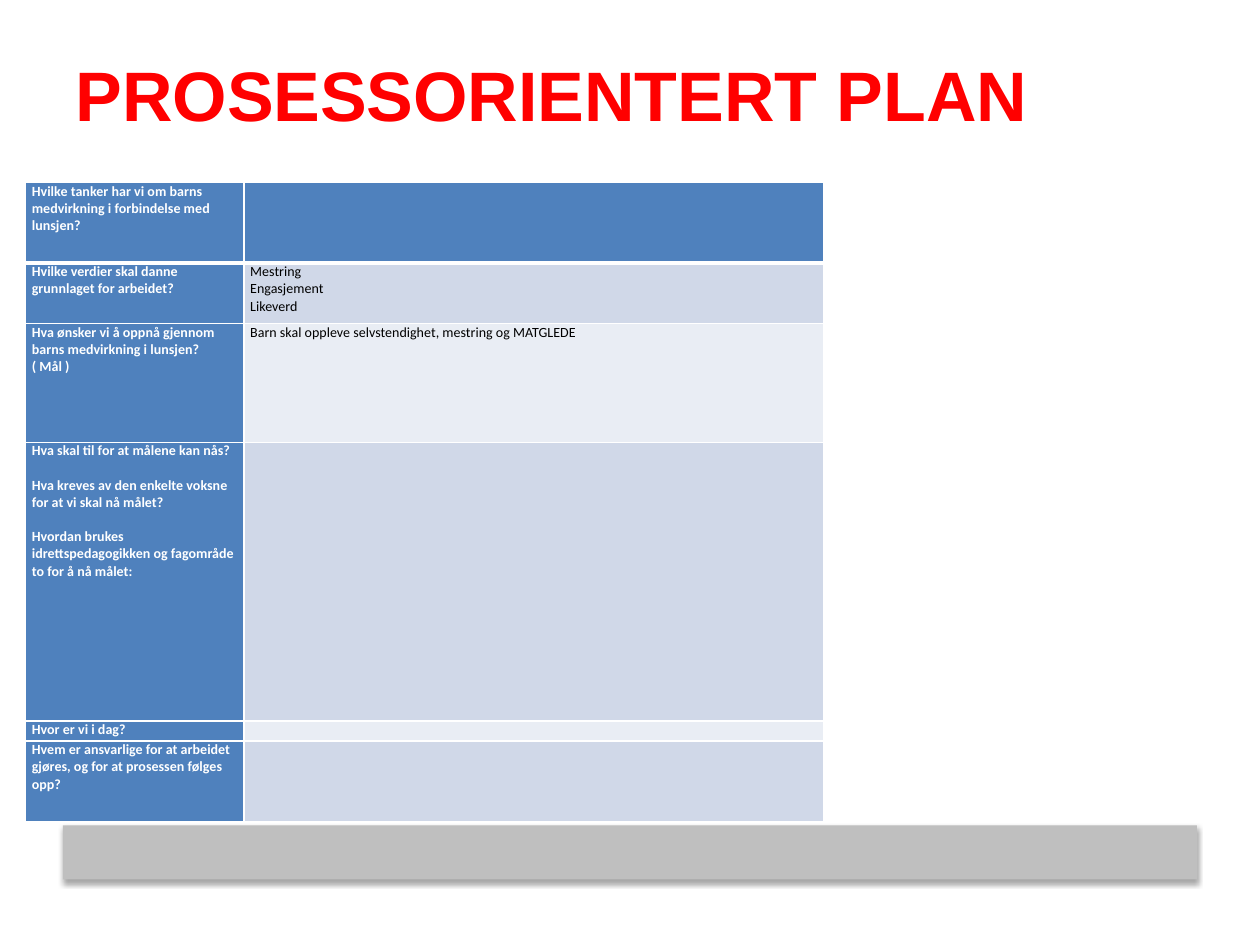
from lxml.etree import SubElement
from pptx import Presentation
from pptx.dml.color import RGBColor
from pptx.enum.shapes import MSO_SHAPE
from pptx.enum.text import MSO_ANCHOR, PP_ALIGN
from pptx.oxml.ns import qn
from pptx.util import Pt

COLORS = {
    "title": "FF0000",
    "question": "4F81BD",
    "band_dark": "D0D8E8",
    "band_light": "E9EDF4",
    "white": "FFFFFF",
    "black": "000000",
    "bar": "BFBFBF",
}
TITLE_FRAME = {"word_wrap": True, "vertical_anchor": MSO_ANCHOR.TOP, "margin_top": Pt(8)}
TITLE_FONT = {"name": "Arial", "size": Pt(40), "bold": True}
QUESTION_FONT = {"name": "Calibri", "size": Pt(8), "bold": True}
ANSWER_FONT = {**QUESTION_FONT, "bold": False}
CELL_MARGINS = {
    "margin_left": Pt(3.6), "margin_right": Pt(3.6),
    "margin_top": Pt(0), "margin_bottom": Pt(0),
}
COLUMN_WIDTHS = [124.8, 331.4]
QUESTION_GAP = 9.8
PLAN = [
    (46, ["Hvilke tanker har vi om barns medvirkning i forbindelse med lunsjen?"], "", 0),
    (34.6, ["Hvilke verdier skal danne grunnlaget for arbeidet?"],
     "Mestring\vEngasjement\vLikeverd", 0),
    (67.8, ["Hva ønsker vi å oppnå gjennom barns medvirkning i lunsjen?", "( Mål )"],
     "Barn skal oppleve selvstendighet, mestring og MATGLEDE", 0),
    (159.2, ["Hva skal til for at målene kan nås?",
             "Hva kreves av den enkelte voksne for at vi skal nå målet?",
             "Hvordan brukes idrettspedagogikken og fagområde to for å nå målet:"],
     "", QUESTION_GAP),
    (11.6, ["Hvor er vi i dag?"], "", 0),
    (46, ["Hvem er ansvarlige for at arbeidet gjøres, og for at prosessen følges opp?"], "", 0),
]


def apply_format(target, values):
    """Set each named attribute on the target."""
    for name, value in values.items():
        setattr(target, name, value)


def rgb(name):
    """Return the palette colour of that name."""
    return RGBColor.from_string(COLORS[name])


def add_color(parent, name):
    """Append a colour element and return it."""
    return SubElement(parent, qn("a:srgbClr"), val=COLORS[name])


def add_title(slide, wording):
    """Place and format the title placeholder."""
    title = slide.shapes.title
    apply_format(title, {"left": Pt(36), "top": Pt(21.6), "width": Pt(648), "height": Pt(92.9)})
    apply_format(title.text_frame, TITLE_FRAME)
    title.text_frame.text = wording
    heading = title.text_frame.paragraphs[0]
    heading.alignment = PP_ALIGN.LEFT
    apply_format(heading.runs[0].font, TITLE_FONT)
    heading.runs[0].font.color.rgb = rgb("title")


def add_footer_bar(slide):
    """Draw the grey bar with its soft shadow."""
    bar = slide.shapes.add_shape(MSO_SHAPE.RECTANGLE, Pt(36), Pt(471.6), Pt(648), Pt(31))
    bar.fill.solid()
    bar.fill.fore_color.rgb = rgb("bar")
    bar.line.fill.background()
    bar.shadow.inherit = False
    effects = bar._element.spPr.find(qn("a:effectLst"))
    shadow = SubElement(effects, qn("a:outerShdw"), blurRad=str(Pt(3.1)),
                        dist=str(Pt(1.8)), dir="5400000", rotWithShape="0")
    SubElement(add_color(shadow, "black"), qn("a:alpha"), val="35000")


def add_borders(cell, top, bottom):
    """Give a cell white borders, with its own top and bottom widths."""
    properties = cell._tc.get_or_add_tcPr()
    for side, width in {"L": 1, "R": 1, "T": top, "B": bottom}.items():
        border = SubElement(properties, qn(f"a:ln{side}"), w=str(Pt(width)))
        add_color(SubElement(border, qn("a:solidFill")), "white")


def fill_cell(cell, lines, font, ink, background, gap=0):
    """Write the lines of a cell and set its background."""
    apply_format(cell, {**CELL_MARGINS, "vertical_anchor": MSO_ANCHOR.TOP})
    cell.fill.solid()
    cell.fill.fore_color.rgb = rgb(background)
    cell.text = "\n".join(lines)
    for index, paragraph in enumerate(cell.text_frame.paragraphs):
        paragraph.space_before = Pt(gap if index else 0)
        for run in paragraph.runs:
            apply_format(run.font, font)
            run.font.color.rgb = rgb(ink)
        if not paragraph.runs:
            SubElement(paragraph._p, qn("a:endParaRPr"), sz="800")


def add_plan_table(slide):
    """Build the table of questions and answers."""
    height = sum(row[0] for row in PLAN)
    table = slide.shapes.add_table(len(PLAN), len(COLUMN_WIDTHS), Pt(14.6), Pt(104.4),
                                   Pt(sum(COLUMN_WIDTHS)), Pt(height)).table
    for column, width in zip(table.columns, COLUMN_WIDTHS):
        column.width = Pt(width)
    for index, (row_height, questions, answer, gap) in enumerate(PLAN):
        table.rows[index].height = Pt(row_height)
        question_cell, answer_cell = table.rows[index].cells
        for cell in (question_cell, answer_cell):
            add_borders(cell, 3 if index == 1 else 1, 3 if index == 0 else 1)
        band = "band_dark" if index % 2 else "band_light"
        fill_cell(question_cell, questions, QUESTION_FONT, "white", "question", gap)
        fill_cell(answer_cell, [answer], ANSWER_FONT, "black", band if index else "question")


def main():
    """Build and save the slide."""
    deck = Presentation()
    apply_format(deck, {"slide_width": Pt(720), "slide_height": Pt(540)})
    slide = deck.slides.add_slide(deck.slide_layouts[5])
    add_footer_bar(slide)
    add_title(slide, "PROSESSORIENTERT PLAN")
    add_plan_table(slide)
    deck.save("out.pptx")


if __name__ == "__main__":
    main()
